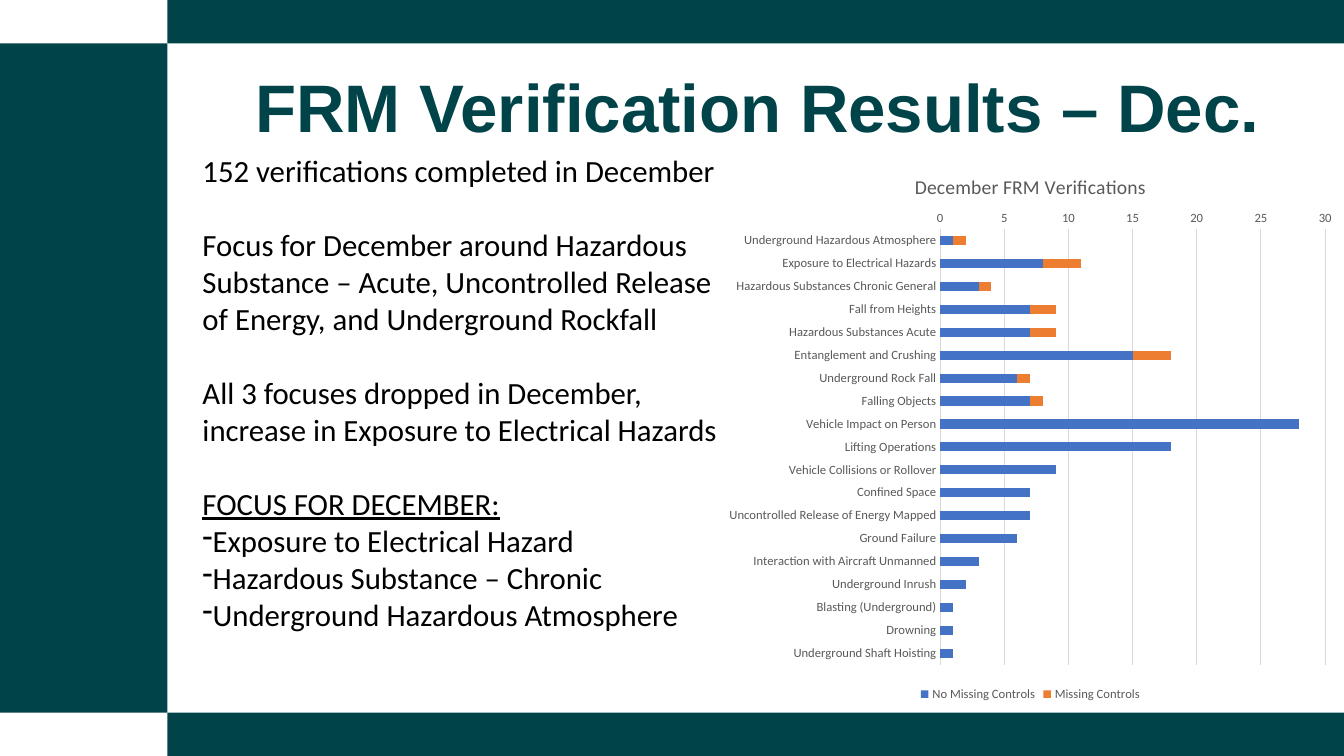
from lxml import etree
from pptx import Presentation
from pptx import util as u
from pptx.chart.data import CategoryChartData
from pptx.dml.color import RGBColor
from pptx.enum import chart as ch, shapes, text
from pptx.oxml.ns import qn

COLORS = {key: RGBColor.from_string(value) for key, value in {
    "teal": "004449", "black": "000000", "gray": "595959",
    "grid": "D9D9D9", "blue": "4472C4", "orange": "ED7D31",
}.items()}
WIDTH, HEIGHT, SIDE, BAND = 13.33, 7.5, 1.66, 0.43
LINE = u.Pt(26.4)


def style(font, size, color, name="Calibri", bold=False):
    font.size, font.name, font.bold = u.Pt(size), name, bold
    font.color.rgb = COLORS[color]


def place_in_chart(part, index, **shares):
    """Fix a chart part's place, in shares of the chart's size."""
    for old in part.findall(qn("c:layout")):
        part.remove(old)
    layout = etree.Element(qn("c:layout"))
    manual = etree.SubElement(layout, qn("c:manualLayout"))
    if "w" in shares:
        etree.SubElement(manual, qn("c:layoutTarget"), val="inner")
    for mode in ("xMode", "yMode"):
        etree.SubElement(manual, qn(f"c:{mode}"), val="edge")
    for key, share in shares.items():
        etree.SubElement(manual, qn(f"c:{key}"), val=str(share))
    part.insert(index, layout)


prs = Presentation()
prs.slide_width, prs.slide_height = u.Inches(WIDTH), u.Inches(HEIGHT)
slide = prs.slides.add_slide(prs.slide_layouts[5])

# Frame: side panel, top band and bottom band
for box in [(0, BAND, SIDE, HEIGHT - 2 * BAND),
            (SIDE, 0, WIDTH - SIDE, BAND),
            (SIDE, HEIGHT - BAND, WIDTH - SIDE, BAND)]:
    panel = slide.shapes.add_shape(shapes.MSO_SHAPE.RECTANGLE, *map(u.Inches, box))
    panel.shadow.inherit = False
    panel.fill.solid()
    panel.fill.fore_color.rgb = COLORS["teal"]
    panel.line.fill.background()

title = slide.shapes.title
title.left, title.top, title.width, title.height = map(u.Inches, (2.14, 0.59, 10.75, 0.91))
title.text_frame.text = "FRM Verification Results – Dec."
title.text_frame.vertical_anchor = text.MSO_ANCHOR.MIDDLE
heading = title.text_frame.paragraphs[0]
heading.alignment = text.PP_ALIGN.CENTER
style(heading.font, 48, "teal", "Arial", True)

# Summary: statements set apart by one line, then the focus list
statements = [
    "152 verifications completed in December",
    "Focus for December around Hazardous Substance – Acute, "
    "Uncontrolled Release of Energy, and Underground Rockfall",
    "All 3 focuses dropped in December, increase in Exposure to Electrical Hazards",
]
focus_heading = "FOCUS FOR DECEMBER:"
focuses = ["Exposure to Electrical Hazard", "Hazardous Substance – Chronic",
           "Underground Hazardous Atmosphere"]
summary = slide.shapes.add_textbox(*map(u.Inches, (1.91, 1.46, 5.39, 4.91))).text_frame
summary.word_wrap = True
summary.text = "\n".join(statements + [focus_heading] + focuses)
for paragraph in summary.paragraphs:
    paragraph.line_spacing = LINE
    if paragraph.text in statements:
        paragraph.space_after = LINE
    if paragraph.text in focuses:
        properties = paragraph._p.get_or_add_pPr()
        properties.set("marL", "0")
        properties.set("indent", "0")
        etree.SubElement(properties, qn("a:buChar"), char="-")
    style(paragraph.font, 22, "black")
    paragraph.font.underline = paragraph.text == focus_heading

# Hazard: verifications with no missing controls, with missing controls
verifications = {
    "Underground Hazardous Atmosphere": (1, 1),
    "Exposure to Electrical Hazards": (8, 3),
    "Hazardous Substances Chronic General": (3, 1),
    "Fall from Heights": (7, 2),
    "Hazardous Substances Acute": (7, 2),
    "Entanglement and Crushing": (15, 3),
    "Underground Rock Fall": (6, 1),
    "Falling Objects": (7, 1),
    "Vehicle Impact on Person": (28, None),
    "Lifting Operations": (18, None),
    "Vehicle Collisions or Rollover": (9, None),
    "Confined Space": (7, None),
    "Uncontrolled Release of Energy Mapped": (7, None),
    "Ground Failure": (6, None),
    "Interaction with Aircraft Unmanned": (3, None),
    "Underground Inrush": (2, None),
    "Blasting (Underground)": (1, None),
    "Drowning": (1, None),
    "Underground Shaft Hoisting": (1, None),
}
data = CategoryChartData()
data.categories = list(verifications)
for name, counts in zip(("No Missing Controls", "Missing Controls"),
                        zip(*verifications.values())):
    data.add_series(name, counts)
chart = slide.shapes.add_chart(ch.XL_CHART_TYPE.BAR_STACKED,
                               *map(u.Inches, (7.11, 1.46, 6.22, 5.54)), data).chart
style(chart.font, 10, "black")

chart.has_title = True
chart.chart_title.text_frame.text = "December FRM Verifications"
style(chart.chart_title.text_frame.paragraphs[0].font, 14, "gray")
chart.chart_title.include_in_layout = False
place_in_chart(chart.chart_title._element, 1, x=0.31, y=0.04)
place_in_chart(chart._chartSpace.chart.plotArea, 0, x=0.356, y=0.147, w=0.614, h=0.78)

chart.has_legend = True
chart.legend.position = ch.XL_LEGEND_POSITION.BOTTOM
chart.legend.include_in_layout = False
style(chart.legend.font, 9, "gray")

plot = chart.plots[0]
plot.gap_width, plot.overlap, plot.vary_by_categories = 150, 100, False
for series, color in zip(plot.series, ("blue", "orange")):
    series.format.fill.solid()
    series.format.fill.fore_color.rgb = COLORS[color]
    series.invert_if_negative = False

hazards, counts = chart.category_axis, chart.value_axis
for axis in (hazards, counts):
    axis.major_tick_mark = axis.minor_tick_mark = ch.XL_TICK_MARK.NONE
    style(axis.tick_labels.font, 9, "gray")
hazards.reverse_order = True
counts.minimum_scale, counts.maximum_scale, counts.major_unit = 0, 30, 5
counts.has_major_gridlines = True
counts.format.line.fill.background()
for line in (hazards.format.line, counts.major_gridlines.format.line):
    line.color.rgb = COLORS["grid"]
    line.width = u.Pt(0.75)

prs.save("out.pptx")
